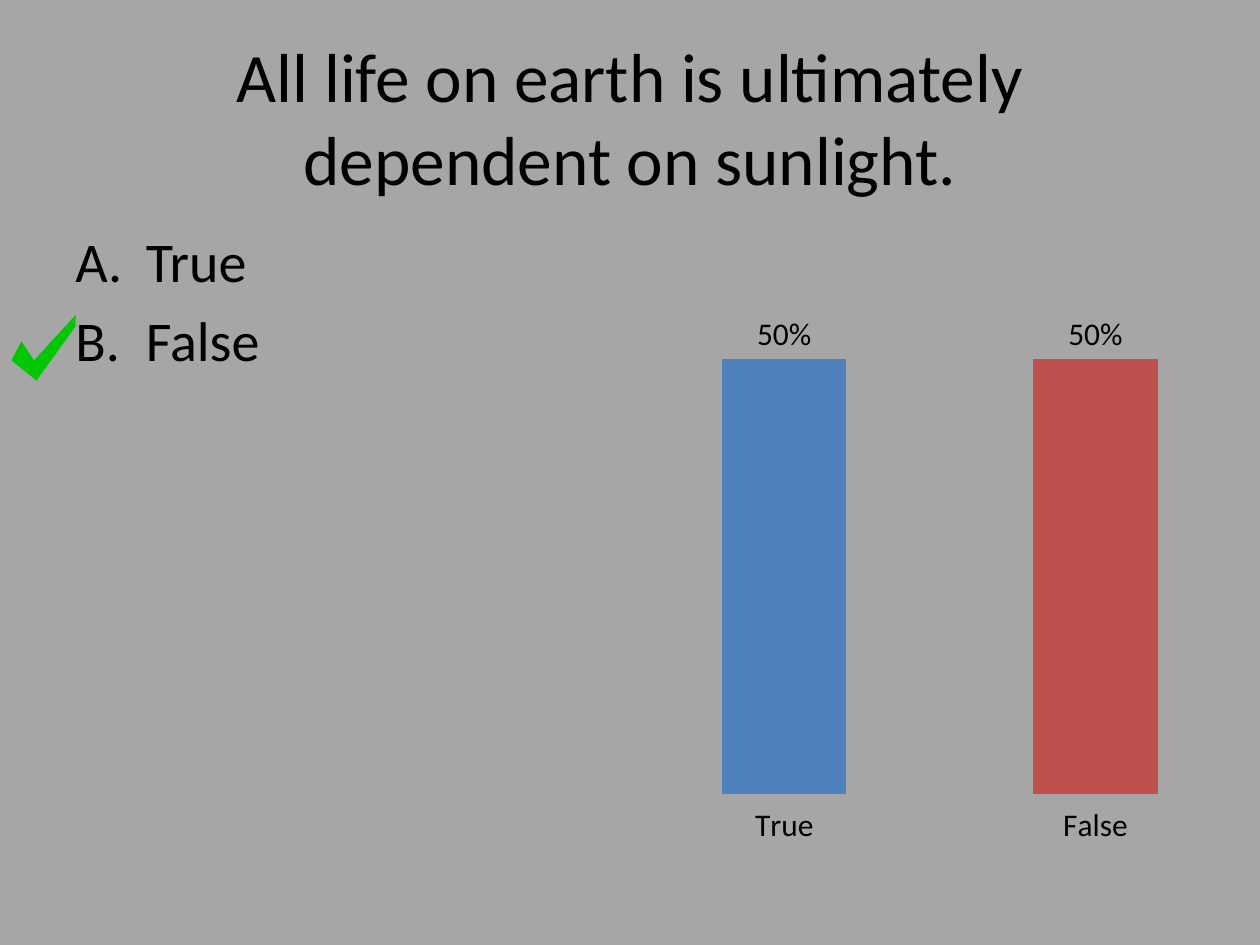
from lxml import etree
from pptx import Presentation
from pptx.chart.data import CategoryChartData
from pptx.dml.color import RGBColor
from pptx.enum.chart import XL_CHART_TYPE, XL_LABEL_POSITION, XL_TICK_LABEL_POSITION, XL_TICK_MARK
from pptx.enum.text import MSO_ANCHOR, PP_ALIGN
from pptx.oxml.ns import qn
from pptx.util import Inches, Pt

# Content
QUESTION = "All life on earth is ultimately dependent on sunlight."
ANSWERS = [("True", 0.5, "blue"), ("False", 0.5, "red")]
COLORS = {"background": "A6A6A6", "text": "000000", "blue": "4F81BD",
          "red": "C0504D", "check": "00C800"}
FONT = "Calibri"

# Layout in inches, as shares of the slide
WIDTH, HEIGHT = 10, 7.5
MARGIN = 0.05 * WIDTH
BODY_TOP = 1.75
TITLE_BOX = (MARGIN, 0.04 * HEIGHT, WIDTH - 2 * MARGIN, HEIGHT / 6)
ANSWER_BOX = (MARGIN, BODY_TOP, 0.45 * WIDTH, 0.66 * HEIGHT)
CHART_BOX = (4.93, BODY_TOP, WIDTH / 2, 0.75 * HEIGHT)
PLOT_SHARES = {"x": 0.008, "y": 0.072, "w": 0.992, "h": 0.809}
CHECK_POINTS = [(0.17, 2.71), (0.09, 2.86), (0.29, 3.02),
                (0.6, 2.59), (0.6, 2.5), (0.27, 2.86)]
INDENT = Inches(0.56)


def color(name):
    return RGBColor.from_string(COLORS[name])


def inches(box):
    return [Inches(value) for value in box]


def style_font(font, size):
    font.name, font.size = FONT, Pt(size)
    font.color.rgb = color("text")


def add_text_frame(slide, box):
    frame = slide.shapes.add_textbox(*inches(box)).text_frame
    frame.word_wrap = True
    return frame


def add_run(paragraph, text, size):
    run = paragraph.add_run()
    run.text = text
    style_font(run.font, size)


def set_plot_layout(chart):
    plot_area = chart._chartSpace.chart.plotArea
    for old_layout in plot_area.findall(qn("c:layout")):
        plot_area.remove(old_layout)
    layout = etree.Element(qn("c:layout"))
    manual = etree.SubElement(layout, qn("c:manualLayout"))
    settings = {"layoutTarget": "outer", "xMode": "edge", "yMode": "edge", **PLOT_SHARES}
    for tag, value in settings.items():
        etree.SubElement(manual, qn(f"c:{tag}")).set("val", str(value))
    plot_area.insert(0, layout)


def add_results_chart(slide):
    data = CategoryChartData(number_format="0%")
    data.categories = [answer for answer, _, _ in ANSWERS]
    data.add_series("Series 1", [share for _, share, _ in ANSWERS])
    chart = slide.shapes.add_chart(
        XL_CHART_TYPE.COLUMN_CLUSTERED, *inches(CHART_BOX), data).chart
    chart.has_legend = chart.has_title = False
    style_font(chart.font, 18)
    set_plot_layout(chart)

    for axis in (chart.category_axis, chart.value_axis):
        axis.has_major_gridlines = False
        axis.major_tick_mark = XL_TICK_MARK.OUTSIDE
        axis.format.line.fill.background()
    chart.value_axis.minimum_scale = 0
    chart.value_axis.maximum_scale = 0.6
    chart.value_axis.tick_label_position = XL_TICK_LABEL_POSITION.NONE
    chart.value_axis.tick_labels.number_format = "0%"
    chart.value_axis.tick_labels.number_format_is_linked = False

    plot = chart.plots[0]
    plot.gap_width, plot.vary_by_categories = 150, False
    for index, (_, _, fill_name) in enumerate(ANSWERS):
        fill = plot.series[0].points[index].format.fill
        fill.solid()
        fill.fore_color.rgb = color(fill_name)
    plot.has_data_labels = True
    labels = plot.data_labels
    labels.show_value = True
    labels.number_format, labels.number_format_is_linked = "0%", False
    labels.position = XL_LABEL_POSITION.OUTSIDE_END
    style_font(labels.font, 18)


def add_question(slide):
    frame = add_text_frame(slide, TITLE_BOX)
    frame.vertical_anchor = MSO_ANCHOR.MIDDLE
    frame.paragraphs[0].alignment = PP_ALIGN.CENTER
    add_run(frame.paragraphs[0], QUESTION, 39.6)


def add_answers(slide):
    frame = add_text_frame(slide, ANSWER_BOX)
    for index, (answer, _, _) in enumerate(ANSWERS):
        paragraph = frame.add_paragraph() if index else frame.paragraphs[0]
        properties = paragraph._p.get_or_add_pPr()
        properties.set("marL", str(INDENT))
        properties.set("indent", str(-INDENT))
        etree.SubElement(properties, qn("a:buAutoNum")).set("type", "alphaUcPeriod")
        if index:
            paragraph.space_before = Pt(6.4)
        add_run(paragraph, answer, 32)


def add_check_mark(slide):
    start, *others = [inches(point) for point in CHECK_POINTS]
    builder = slide.shapes.build_freeform(*start)
    builder.add_line_segments(others, close=True)
    check = builder.convert_to_shape()
    check.shadow.inherit = False
    check.fill.solid()
    check.fill.fore_color.rgb = color("check")
    check.line.fill.background()


def main():
    presentation = Presentation()
    presentation.slide_width, presentation.slide_height = Inches(WIDTH), Inches(HEIGHT)
    slide = presentation.slides.add_slide(presentation.slide_layouts[6])
    slide.background.fill.solid()
    slide.background.fill.fore_color.rgb = color("background")
    add_results_chart(slide)
    add_question(slide)
    add_answers(slide)
    add_check_mark(slide)
    presentation.save("out.pptx")


if __name__ == "__main__":
    main()
